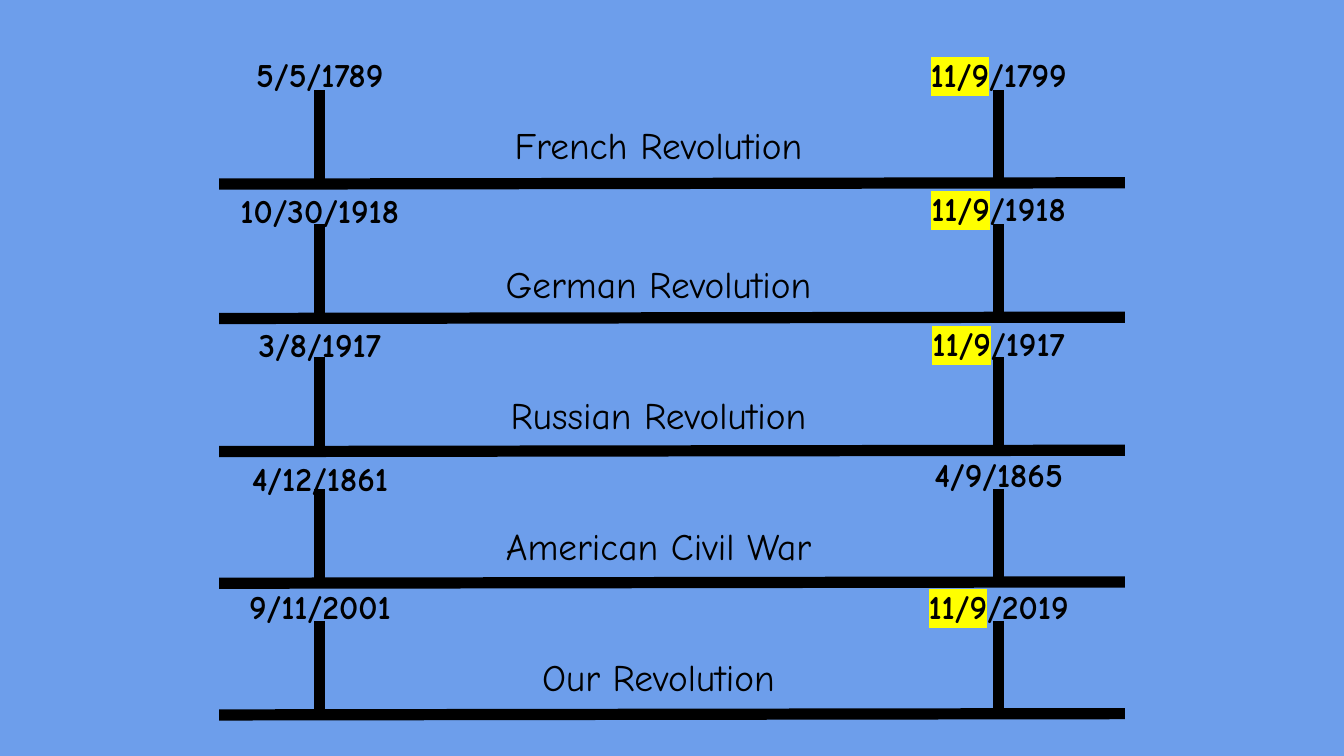
from dataclasses import dataclass

from lxml.etree import SubElement
from pptx import Presentation
from pptx.dml.color import RGBColor
from pptx.enum.shapes import MSO_CONNECTOR
from pptx.enum.text import MSO_ANCHOR, PP_ALIGN
from pptx.oxml import parse_xml
from pptx.oxml.ns import nsdecls, qn
from pptx.slide import Slide
from pptx.util import Inches, Pt

SKY = RGBColor(0x6D, 0x9E, 0xEB)
BLACK = RGBColor(0x00, 0x00, 0x00)
YELLOW = RGBColor(0xFF, 0xFF, 0x00)
FONT = "Comic Neue"
MARKED_DAY = "11/9"

SLIDE_WIDTH = 10
SLIDE_HEIGHT = SLIDE_WIDTH * 9 / 16
AXIS_LEFT, AXIS_RIGHT = 1.63, 8.37
AXIS_RISE = 0.01
START_X, END_X = 2.38, 7.43
NAME_X = 4.9
TICK_HEIGHT = 0.7
END_WIDTH, DATE_HEIGHT = 1.72, 0.38
NAME_WIDTH, NAME_HEIGHT = 2.89, 0.39


@dataclass(frozen=True)
class Conflict:
    name: str
    start: str
    end: str
    tick_top: float
    name_top: float
    start_top: float
    end_top: float
    start_width: float


CONFLICTS = [
    Conflict("French Revolution", "5/5/1789", "11/9/1799", 0.67, 0.81, 0.30, 0.30, 2),
    Conflict("German Revolution", "10/30/1918", "11/9/1918", 1.67, 1.84, 1.31, 1.30, 2),
    Conflict("Russian Revolution", "3/8/1917", "11/9/1917", 2.66, 2.82, 2.31, 2.30, 1.83),
    Conflict("American Civil War", "4/12/1861", "4/9/1865", 3.64, 3.79, 3.31, 3.28, 1.72),
    Conflict("Our Revolution", "9/11/2001", "11/9/2019", 4.62, 4.77, 4.26, 4.26, 1.72),
]


def add_line(slide: Slide, x1: float, y1: float, x2: float, y2: float) -> None:
    line = slide.shapes.add_connector(
        MSO_CONNECTOR.STRAIGHT, Inches(x1), Inches(y1), Inches(x2), Inches(y2))
    line.line.color.rgb = BLACK
    line.line.width = Pt(6)
    SubElement(line._element.spPr, qn("a:effectLst"))


def highlight(run) -> None:
    """Mark a run in yellow; the element must follow the run's colour fill."""
    marker = parse_xml(
        f'<a:highlight {nsdecls("a")}><a:srgbClr val="{YELLOW}"/></a:highlight>')
    run.font._element.find(qn("a:solidFill")).addnext(marker)


def add_label(slide: Slide, text: str, center_x: float, top: float,
              width: float, height: float, size: int, bold: bool = False) -> None:
    """Add centred text, highlighting the marked day when the text opens with it."""
    label = slide.shapes.add_textbox(
        Inches(center_x - width / 2), Inches(top), Inches(width), Inches(height))
    frame = label.text_frame
    frame.word_wrap = True
    frame.vertical_anchor = MSO_ANCHOR.TOP
    frame.margin_left = frame.margin_right = Inches(0.1)
    frame.margin_top = frame.margin_bottom = Inches(0.1)
    paragraph = frame.paragraphs[0]
    paragraph.alignment = PP_ALIGN.CENTER

    marked = MARKED_DAY if text.startswith(MARKED_DAY) else ""
    for part in filter(None, (marked, text[len(marked):])):
        run = paragraph.add_run()
        run.text = part
        run.font.name = FONT
        run.font.size = Pt(size)
        run.font.bold = bold
        run.font.color.rgb = BLACK
        if part == marked:
            highlight(run)


def add_timeline(slide: Slide, conflict: Conflict) -> None:
    axis_y = conflict.tick_top + TICK_HEIGHT
    add_line(slide, AXIS_LEFT, axis_y, AXIS_RIGHT, axis_y - AXIS_RISE)
    for date, x, top, width in (
            (conflict.start, START_X, conflict.start_top, conflict.start_width),
            (conflict.end, END_X, conflict.end_top, END_WIDTH)):
        add_line(slide, x, conflict.tick_top, x, axis_y)
        add_label(slide, date, x, top, width, DATE_HEIGHT, 18, bold=True)
    add_label(slide, conflict.name, NAME_X, conflict.name_top,
              NAME_WIDTH, NAME_HEIGHT, 20)


def main() -> None:
    deck = Presentation()
    deck.slide_width, deck.slide_height = Inches(SLIDE_WIDTH), Inches(SLIDE_HEIGHT)
    slide = deck.slides.add_slide(deck.slide_layouts[6])
    slide.background.fill.solid()
    slide.background.fill.fore_color.rgb = SKY
    for conflict in reversed(CONFLICTS):
        add_timeline(slide, conflict)
    deck.save("out.pptx")


if __name__ == "__main__":
    main()
